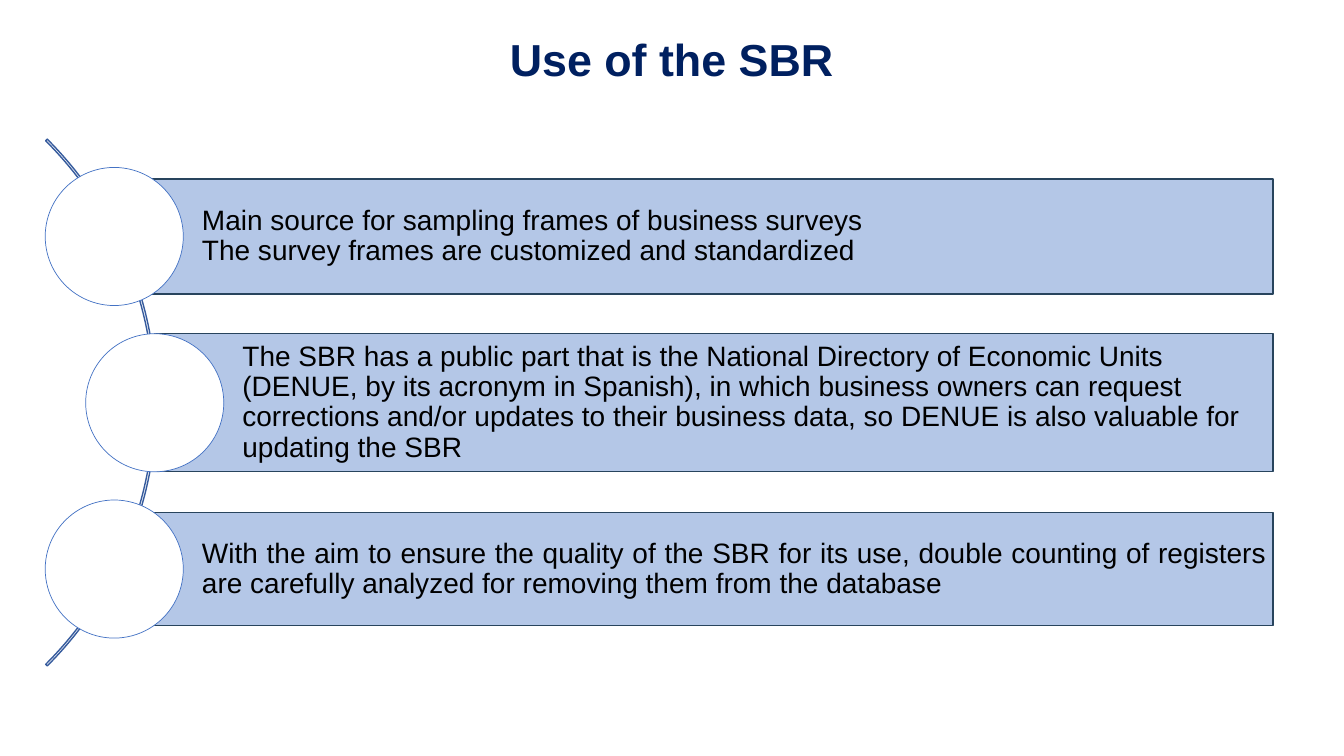
import pptx
import pptx.dml.color
import pptx.enum.shapes
import pptx.enum.text
import pptx.util

Cm = pptx.util.Cm
Pt = pptx.util.Pt
ALIGN = pptx.enum.text.PP_ALIGN
SHAPE = pptx.enum.shapes.MSO_SHAPE

CIRCLE = 3.48
PITCH = 4.19
BAR_RIGHT = 32.08
USES = [
    ("Main source for sampling frames of business surveys\n"
     "The survey frames are customized and standardized", 0, 2.9, ALIGN.LEFT),
    ("The SBR has a public part that is the National Directory of Economic Units "
     "(DENUE, by its acronym in Spanish), in which business owners can request "
     "corrections and/or updates to their business data, so DENUE is also valuable "
     "for updating the SBR", 1.02, CIRCLE, ALIGN.LEFT),
    ("With the aim to ensure the quality of the SBR for its use, double counting of "
     "registers are carefully analyzed for removing them from the database",
     0, 2.84, ALIGN.JUSTIFY),
]


def color(value):
    return pptx.dml.color.RGBColor.from_string(value)


def add_shape(slide, kind, left, top, width, height, fill, line, line_width):
    shape = slide.shapes.add_shape(kind, Cm(left), Cm(top), Cm(width), Cm(height))
    shape.shadow.inherit = False
    if fill:
        shape.fill.solid()
        shape.fill.fore_color.rgb = color(fill)
    else:
        shape.fill.background()
    shape.line.color.rgb = color(line)
    shape.line.width = Pt(line_width)
    return shape


def write(text_frame, text, size, text_color, alignment, bold=False):
    text_frame.word_wrap = True
    paragraph = text_frame.paragraphs[0]
    paragraph.text = text
    paragraph.alignment = alignment
    paragraph.line_spacing = 0.9
    for run in paragraph.runs:
        run.font.name = "Arial"
        run.font.size = Pt(size)
        run.font.bold = bold
        run.font.color.rgb = color(text_color)


def add_title(slide, left, top, width, height):
    box = slide.shapes.add_textbox(Cm(left), Cm(top), Cm(width), Cm(height))
    write(box.text_frame, "Use of the SBR", 32, "002060", ALIGN.CENTER, bold=True)


def add_arc(slide, left, top, size):
    arc = add_shape(slide, SHAPE.BLOCK_ARC, left, top, size, size, None, "365B9D", 1)
    for index, value in enumerate((189, 27, 0.003)):
        arc.adjustments[index] = value


def add_use(slide, left, middle, right, bar_height, text, alignment):
    bar_left = left + CIRCLE / 2
    bar = add_shape(slide, SHAPE.RECTANGLE, bar_left, middle - bar_height / 2,
                    right - bar_left, bar_height, "B4C7E7", "28445D", 1)
    frame = bar.text_frame
    frame.vertical_anchor = pptx.enum.text.MSO_ANCHOR.MIDDLE
    frame.margin_left = Cm(2.21)
    frame.margin_top = frame.margin_right = frame.margin_bottom = Cm(0.15)
    write(frame, text, 20, "000000", alignment)
    add_shape(slide, SHAPE.OVAL, left, middle - CIRCLE / 2, CIRCLE, CIRCLE,
              "FFFFFF", "4472C4", 0.5)


def add_uses(slide, left, first_middle, right):
    for index, (text, indent, bar_height, alignment) in enumerate(USES):
        add_use(slide, left + indent, first_middle + index * PITCH, right,
                bar_height, text, alignment)


def main():
    presentation = pptx.Presentation()
    presentation.slide_width = Cm(33.87)
    presentation.slide_height = Cm(19.05)
    slide = presentation.slides.add_slide(presentation.slide_layouts[6])
    add_arc(slide, -14.83, 0.76, 18.77)
    add_uses(slide, 1.14, 5.96, BAR_RIGHT)
    add_title(slide, 11.66, 0.84, 10.54, 1.32)
    presentation.save("out.pptx")


if __name__ == "__main__":
    main()
